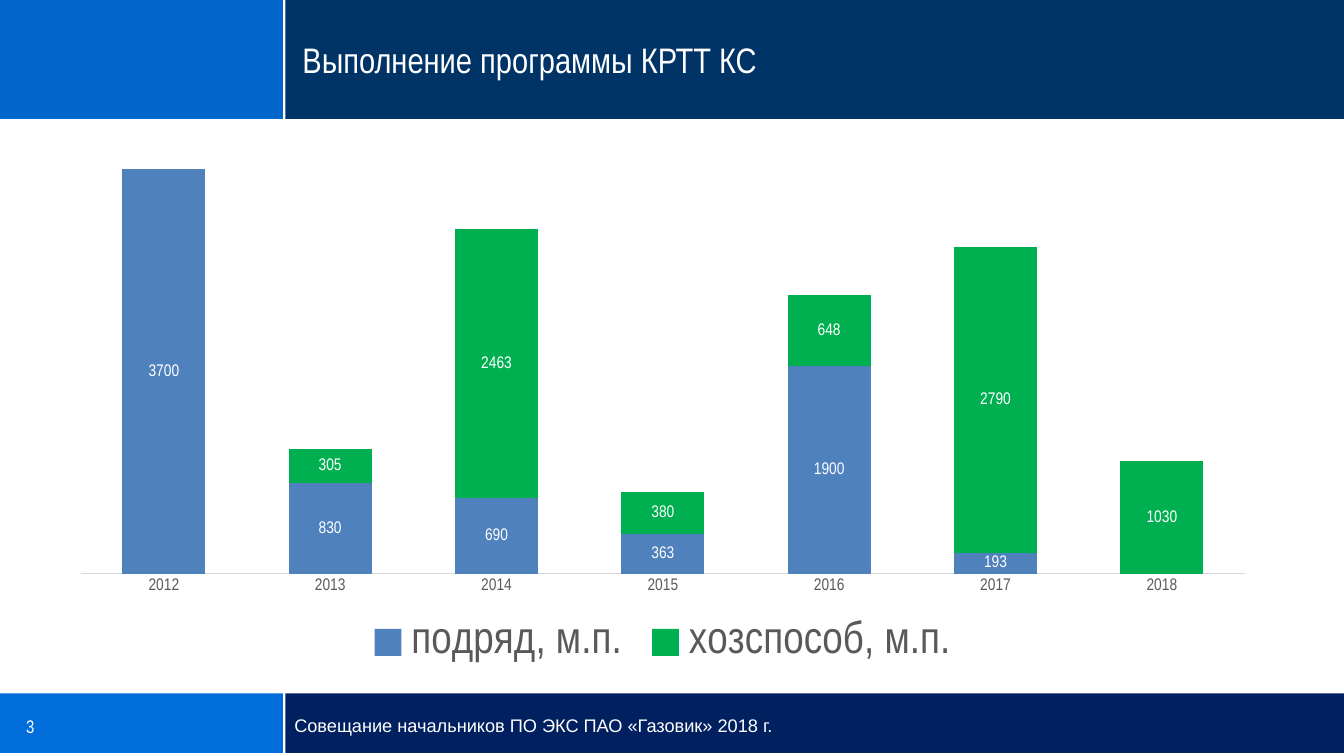
from lxml import etree
from pptx import Presentation
from pptx import util as u
from pptx.chart.data import CategoryChartData
from pptx.dml.color import RGBColor
from pptx.enum import chart as ch, shapes, text
from pptx.oxml import parse_xml
from pptx.oxml.ns import nsdecls, qn

TITLE = "Выполнение программы КРТТ КС"
FOOTER = "Совещание начальников ПО ЭКС ПАО «Газовик» 2018 г."
PAGE_NUMBER = "3"
YEARS = ["2012", "2013", "2014", "2015", "2016", "2017", "2018"]

WHITE = RGBColor(0xFF, 0xFF, 0xFF)
GREY = RGBColor(0x59, 0x59, 0x59)
AXIS_GREY = RGBColor(0xD9, 0xD9, 0xD9)
HEADER_BLUE = RGBColor(0x00, 0x66, 0xCC)
HEADER_NAVY = RGBColor(0x00, 0x33, 0x66)
FOOTER_BLUE = RGBColor(0x00, 0x6D, 0xDA)
FOOTER_NAVY = RGBColor(0x00, 0x20, 0x60)
BAR_BLUE = RGBColor(0x4F, 0x81, 0xBD)
BAR_GREEN = RGBColor(0x00, 0xB0, 0x50)

SERIES = [
    ("подряд, м.п.", [3700, 830, 690, 363, 1900, 193, 0], BAR_BLUE),
    ("хозспособ, м.п.", [None, 305, 2463, 380, 648, 2790, 1030], BAR_GREEN),
]
BANDS = [
    (6.88, 0.59, FOOTER_BLUE, FOOTER_NAVY),
    (0, 1.18, HEADER_BLUE, HEADER_NAVY),
]
SLIDE_WIDTH = 13.33
SPLIT = 2.82
GAP = 0.01
NARROW = "Arial Narrow"
PLOT_LAYOUT = {"x": 0.02, "y": 0.02, "w": 0.96, "h": 0.8}


def set_font(font, size, color, name=NARROW):
    font.size = u.Pt(size)
    font.name = name
    font.color.rgb = color


def add_text(slide, content, box, size, name=NARROW, anchor=text.MSO_ANCHOR.TOP,
             inset=(0.1, 0.05)):
    shape = slide.shapes.add_textbox(*[u.Inches(value) for value in box])
    frame = shape.text_frame
    frame.word_wrap = True
    frame.vertical_anchor = anchor
    frame.margin_left = frame.margin_right = u.Inches(inset[0])
    frame.margin_top = frame.margin_bottom = u.Inches(inset[1])
    run = frame.paragraphs[0].add_run()
    run.text = content
    set_font(run.font, size, WHITE, name)


def add_rectangle(slide, left, top, width, height, color):
    shape = slide.shapes.add_shape(
        shapes.MSO_SHAPE.RECTANGLE, u.Inches(left), u.Inches(top),
        u.Inches(width), u.Inches(height))
    shape.shadow.inherit = False
    shape.fill.solid()
    shape.fill.fore_color.rgb = color
    shape.line.fill.background()


def add_band(slide, top, height, left_color, right_color):
    right = SPLIT + GAP
    add_rectangle(slide, 0, top, SPLIT, height, left_color)
    add_rectangle(slide, right, top, SLIDE_WIDTH - right, height, right_color)
    divider = slide.shapes.add_connector(
        shapes.MSO_CONNECTOR.STRAIGHT, u.Inches(SPLIT), u.Inches(top),
        u.Inches(SPLIT), u.Inches(top + height))
    divider.line.color.rgb = WHITE
    divider.line.width = u.Pt(1.25)
    etree.SubElement(divider._element.spPr, qn("a:effectLst"))


def set_plot_layout(chart):
    plot_area = chart._chartSpace.chart.plotArea
    for old_layout in plot_area.findall(qn("c:layout")):
        plot_area.remove(old_layout)
    modes = '<c:xMode val="edge"/><c:yMode val="edge"/>'
    sizes = "".join(f'<c:{key} val="{value}"/>' for key, value in PLOT_LAYOUT.items())
    plot_area.insert(0, parse_xml(
        f'<c:layout {nsdecls("c")}><c:manualLayout><c:layoutTarget val="inner"/>'
        f"{modes}{sizes}</c:manualLayout></c:layout>"))


def add_program_chart(slide):
    data = CategoryChartData()
    data.categories = YEARS
    for name, values, _ in SERIES:
        data.add_series(name, values)
    chart = slide.shapes.add_chart(
        ch.XL_CHART_TYPE.COLUMN_STACKED, u.Inches(0.56), u.Inches(1.24),
        u.Inches(12.03), u.Inches(5.43), data).chart
    chart.has_title = False
    set_font(chart.font, 10, RGBColor(0, 0, 0))

    plot = chart.plots[0]
    plot.gap_width = 100
    plot.overlap = 100
    plot.vary_by_categories = False
    for series, (_, _, color) in zip(plot.series, SERIES):
        series.format.fill.solid()
        series.format.fill.fore_color.rgb = color
        series.invert_if_negative = False
        labels = series.data_labels
        labels.show_value = True
        labels.number_format = "0;;;"
        labels.number_format_is_linked = False
        labels.position = ch.XL_LABEL_POSITION.CENTER
        set_font(labels.font, 12, WHITE)

    years = chart.category_axis
    years.major_tick_mark = ch.XL_TICK_MARK.NONE
    years.format.line.color.rgb = AXIS_GREY
    years.format.line.width = u.Pt(0.75)
    set_font(years.tick_labels.font, 12, GREY)

    amounts = chart.value_axis
    amounts.minimum_scale = 0
    amounts.maximum_scale = 4000
    amounts.has_major_gridlines = False
    amounts.visible = False

    chart.has_legend = True
    chart.legend.position = ch.XL_LEGEND_POSITION.BOTTOM
    chart.legend.include_in_layout = False
    set_font(chart.legend.font, 32, GREY)
    set_plot_layout(chart)


def main():
    presentation = Presentation()
    presentation.slide_width = u.Inches(SLIDE_WIDTH)
    presentation.slide_height = u.Inches(7.5)
    slide = presentation.slides.add_slide(presentation.slide_layouts[6])
    for band in BANDS:
        add_band(slide, *band)
    add_text(slide, PAGE_NUMBER, (0.16, 7.05, 2.6, 0.33), 13)
    add_text(slide, FOOTER, (SPLIT, 7.04, 9.92, 0.33), 13, name="Arial")
    add_text(slide, TITLE, (2.91, 0.11, 10.4, 0.73), 25.3,
             anchor=text.MSO_ANCHOR.BOTTOM, inset=(0.09, 0.04))
    add_program_chart(slide)
    presentation.save("out.pptx")


if __name__ == "__main__":
    main()
